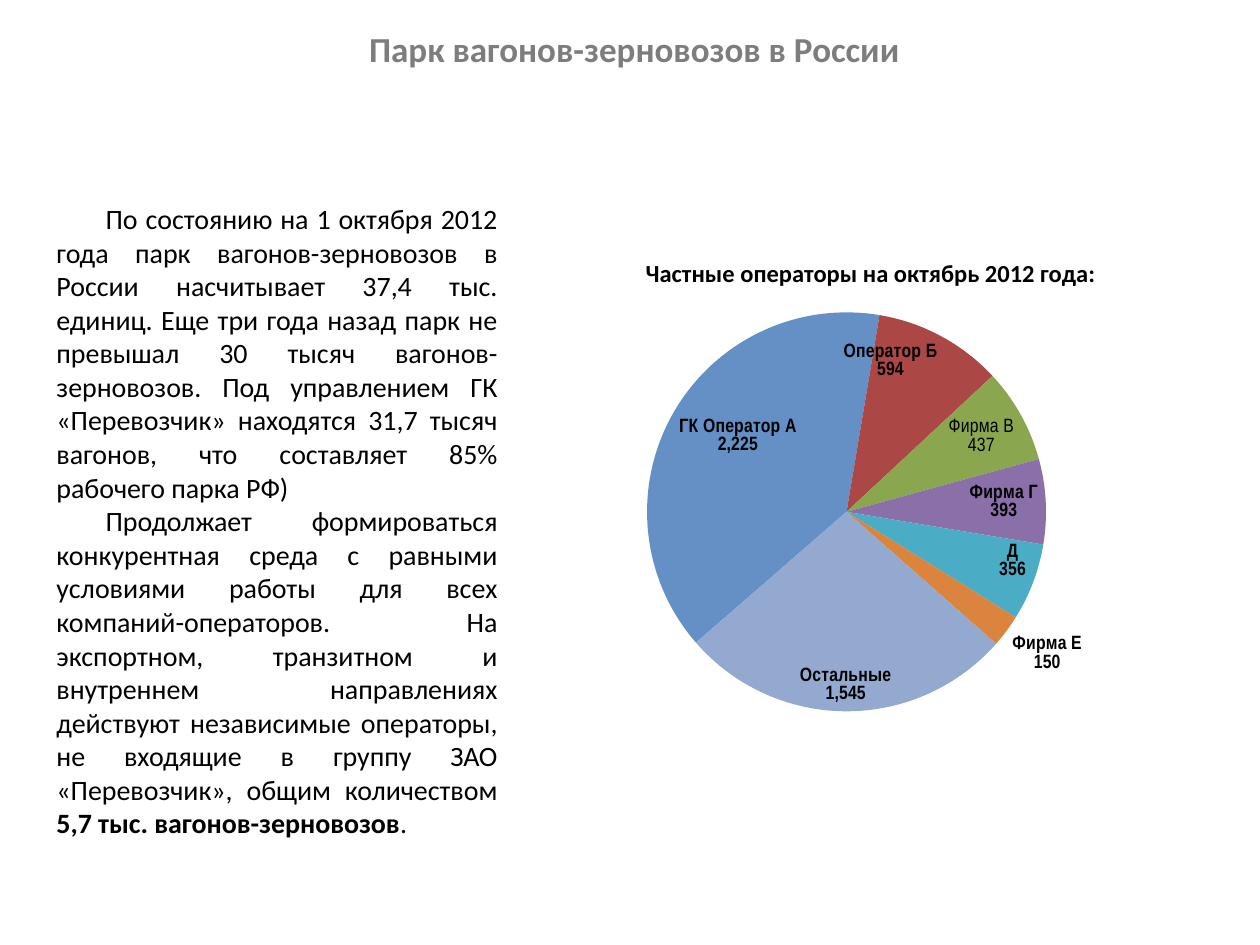
from lxml.etree import SubElement
from pptx import Presentation
from pptx.chart.data import CategoryChartData
from pptx.dml.color import RGBColor
from pptx.enum.chart import XL_CHART_TYPE as ChartType, XL_LABEL_POSITION as LabelPosition
from pptx.enum.shapes import MSO_SHAPE as Shape
from pptx.enum.text import PP_ALIGN as Align
from pptx.oxml import parse_xml
from pptx.oxml.ns import nsdecls, qn
from pptx.util import Inches, Pt

COLORS = {"title": "7D7D7D", "text": "000000", "panel": "FFFFFF"}
OPERATORS = [
    ("ГК Оператор А", 2225, "6490C6"),
    ("Оператор Б", 594, "AB4744"),
    ("Фирма В", 437, "8AA64F"),
    ("Фирма Г", 393, "8A6FA8"),
    ("Д", 356, "4BACC6"),
    ("Фирма Е", 150, "DB843D"),
    ("Остальные", 1545, "93A9CF"),
]
BODY = [
    [("По состоянию на 1 октября 2012 года парк вагонов-зерновозов в России "
      "насчитывает 37,4 тыс. единиц. Еще три года назад парк не превышал 30 тысяч "
      "вагонов-зерновозов. Под управлением ГК «Перевозчик» находятся 31,7 тысяч "
      "вагонов, что составляет 85% рабочего парка РФ)", False)],
    [("Продолжает формироваться конкурентная среда с равными условиями работы для "
      "всех компаний-операторов. На экспортном, транзитном и внутреннем направлениях "
      "действуют независимые операторы, не входящие в группу ЗАО «Перевозчик», "
      "общим количеством ", False),
     ("5,7 тыс. вагонов-зерновозов", True), (".", False)],
]


def style(font, size, color="text", bold=None, name="Calibri"):
    font.name, font.size, font.bold = name, Pt(size), bold
    font.color.rgb = RGBColor.from_string(COLORS[color])


presentation = Presentation()
presentation.slide_width, presentation.slide_height = Inches(10), Inches(7.5)
slide = presentation.slides.add_slide(presentation.slide_layouts[6])

# Title and chart heading
title = slide.shapes.add_textbox(Inches(1.06), Inches(0.17), Inches(7.95), Inches(0.44))
heading = slide.shapes.add_shape(
    Shape.RECTANGLE, Inches(4.92), Inches(2), Inches(3.98), Inches(0.51))
heading.shadow.inherit = False
heading.line.fill.background()
heading.fill.solid()
heading.fill.fore_color.rgb = RGBColor.from_string(COLORS["panel"])
fill_color = heading.fill._xPr.find(".//" + qn("a:srgbClr"))
SubElement(fill_color, qn("a:alpha"), val="23000")
heading.text_frame.vertical_anchor = 1
for shape, text, size, color in (
    (title, "Парк вагонов-зерновозов в России", 20, "title"),
    (heading, "Частные операторы на октябрь 2012 года:", 14, "text"),
):
    shape.text_frame.word_wrap = True
    paragraph = shape.text_frame.paragraphs[0]
    paragraph.text = text
    paragraph.alignment = Align.CENTER
    style(paragraph.font, size, color, True)

# Body text
body = slide.shapes.add_textbox(Inches(0.35), Inches(1.55), Inches(3.7), Inches(5.49))
frame = body.text_frame
frame.word_wrap = True
for index, runs in enumerate(BODY):
    paragraph = frame.add_paragraph() if index else frame.paragraphs[0]
    paragraph.alignment = Align.JUSTIFY
    paragraph._p.get_or_add_pPr().set("indent", str(Inches(0.39)))
    style(paragraph.font, 16)
    for text, bold in runs:
        run = paragraph.add_run()
        run.text = text
        run.font.bold = bold

# Pie of private operators
data = CategoryChartData(number_format="#,##0")
data.categories = [name for name, _, _ in OPERATORS]
data.add_series("Series 1", [value for _, value, _ in OPERATORS])
chart = slide.shapes.add_chart(
    ChartType.PIE, Inches(4.45), Inches(2.41), Inches(4.88), Inches(3.48), data).chart
chart.has_legend = chart.has_title = False
style(chart.font, 10)
plot = chart.plots[0]
plot.vary_by_categories = True
series = plot.series[0]

labels = series.data_labels
labels.show_value = labels.show_category_name = True
labels.number_format, labels.number_format_is_linked = "#,##0", False
labels.position = LabelPosition.INSIDE_END
style(labels.font, 11, bold=True, name="Arial Narrow")
for index, (name, _, color) in enumerate(OPERATORS):
    point = series.points[index]
    point.format.fill.solid()
    point.format.fill.fore_color.rgb = RGBColor.from_string(color)
    point.format.line.fill.background()
for index, position, bold in ((2, LabelPosition.INSIDE_END, False),
                              (5, LabelPosition.OUTSIDE_END, True)):
    label = series.points[index].data_label
    style(label.font, 11, bold=bold, name="Arial Narrow")
    label.position = position

chart_xml = chart._chartSpace
for label_xml in chart_xml.iter(qn("c:dLbl"), qn("c:dLbls")):
    label_xml.find(qn("c:showCatName")).set("val", "1")
    last_flag = label_xml.find(qn("c:showBubbleSize"))
    if last_flag is None:
        last_flag = label_xml.find(qn("c:showPercent"))
    last_flag.addnext(parse_xml(f"<c:separator {nsdecls('c')}>\n</c:separator>"))

pie = chart_xml.find(".//" + qn("c:pieChart"))
for old_angle in pie.findall(qn("c:firstSliceAng")):
    pie.remove(old_angle)
SubElement(pie, qn("c:firstSliceAng"), val="229")

plot_area = chart_xml.find(".//" + qn("c:plotArea"))
for old_layout in plot_area.findall(qn("c:layout")):
    plot_area.remove(old_layout)
layout = parse_xml(f"<c:layout {nsdecls('c')}/>")
plot_area.insert(0, layout)
manual = SubElement(layout, qn("c:manualLayout"))
for tag, value in (("layoutTarget", "inner"), ("xMode", "edge"), ("yMode", "edge"),
                   ("x", "0.14"), ("y", "0.02"), ("w", "0.65"), ("h", "0.91")):
    SubElement(manual, qn(f"c:{tag}"), val=value)

presentation.save("out.pptx")
